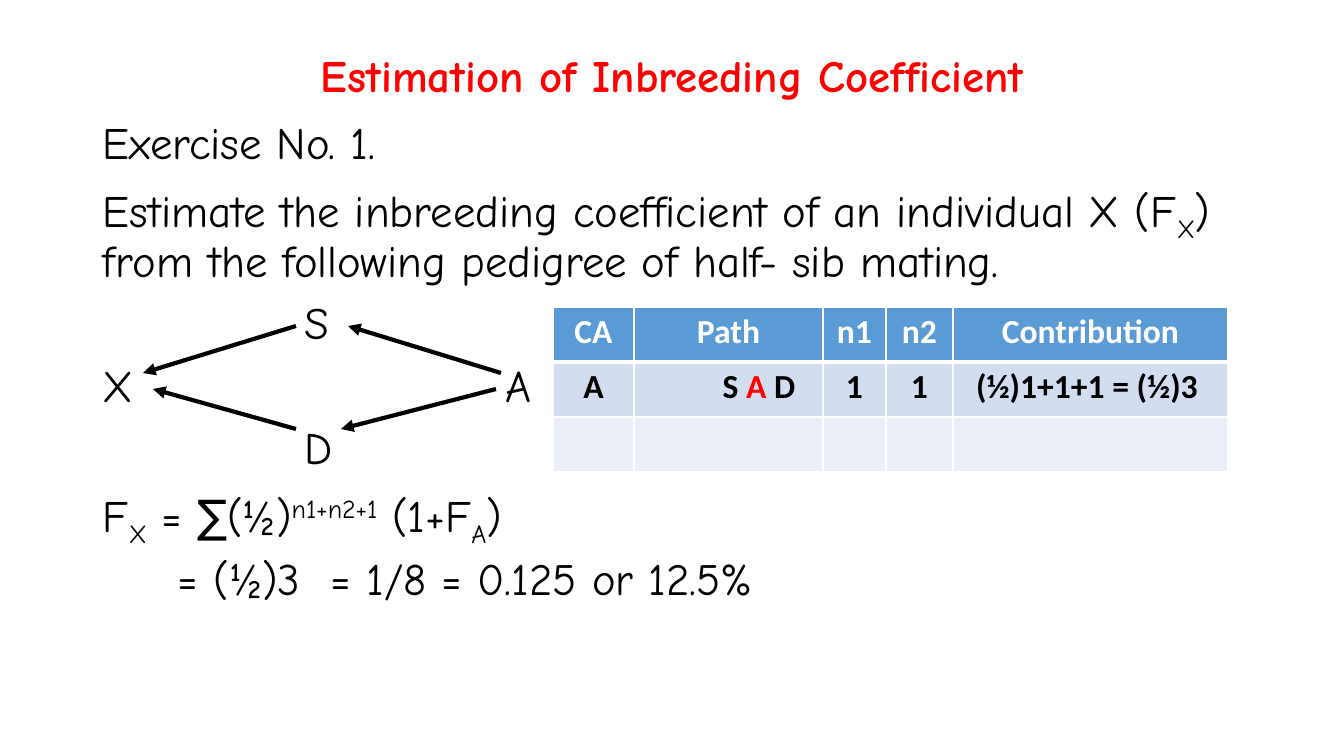
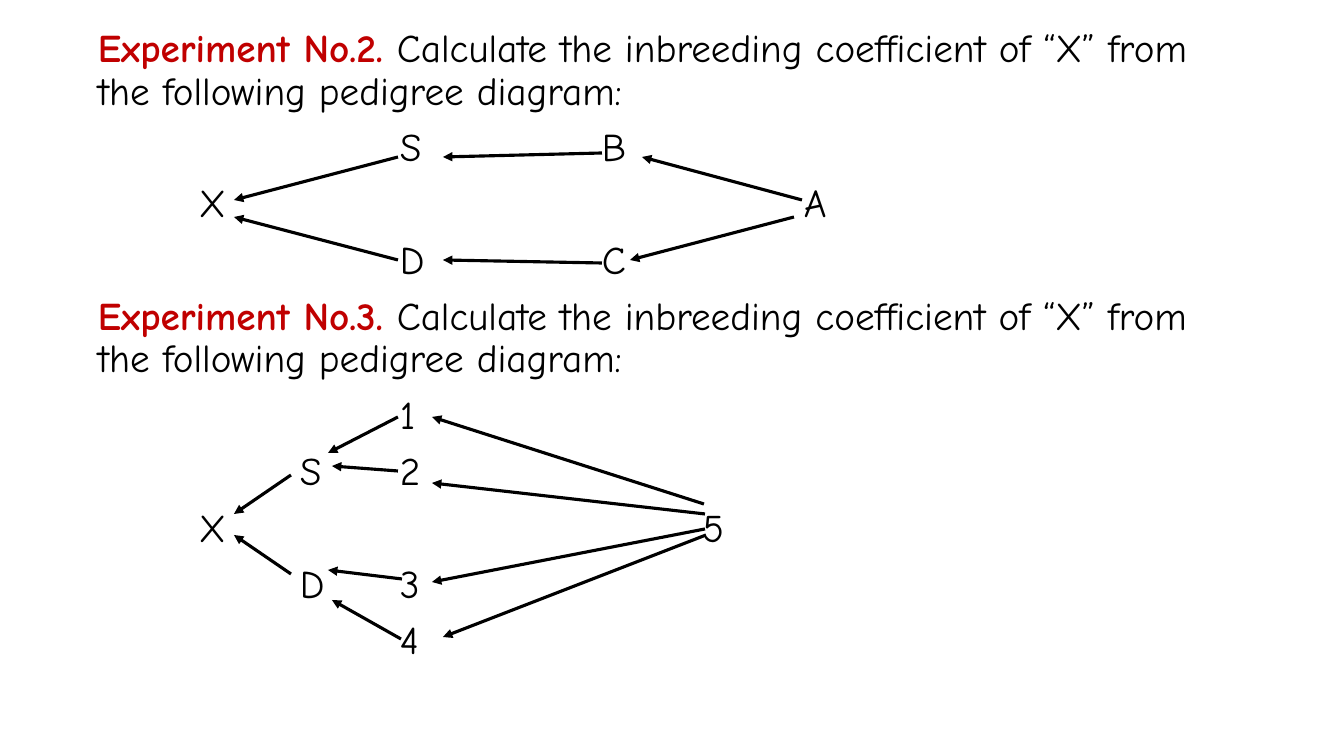
from lxml.etree import SubElement
from pptx import Presentation
from pptx.dml.color import RGBColor
from pptx.enum.shapes import MSO_CONNECTOR
from pptx.enum.text import MSO_ANCHOR as ANCHOR, MSO_AUTO_SIZE as AUTO_SIZE, PP_ALIGN as ALIGN
from pptx.oxml.ns import qn
from pptx.util import Emu, Pt

PX = 914400 / 100.8
SLIDE_SIZE = (1344, 756)
TITLE_ONLY, BLANK = 5, 6
BODY_FONT, TABLE_FONT = "Comic Neue", "Calibri"
BLACK, WHITE, RED, DARK_RED = "000000", "FFFFFF", "FF0000", "C00000"
HEADER_FILL, ROW_FILLS = "5B9BD5", ("D2DEEF", "EAEFF7")
COLUMN_TABS = [round(100.8 * step) for step in range(1, 8)]
RESULT_TABS = [75, 228]

SUB, SUPER = {"baseline": -25000}, {"baseline": 30000}
HEADING = {"bold": True, "color": DARK_RED}

TITLE = "Estimation of Inbreeding Coefficient"
TITLE_BOX = (93, 40, 1159, 76)

# A paragraph is a list of (text, format changes) runs.
EXERCISE_BOX = (93, 116, 1159, 564)
EXERCISE = [
    [("Exercise No. 1.", {})],
    [("Estimate the inbreeding coefficient of an individual X (F", {}), ("X", SUB),
     (") from the following pedigree of half- sib mating.", {})],
    [("\t\tS", {})],
    [("X\t\t\t\tA", {})],
    [("\t\tD", {})],
    [("F", {}), ("X", SUB), (" = ∑(½)", {}), ("n1+n2+1", SUPER),
     (" (1+F", {}), ("A", SUB), (")", {})],
]
RESULT = [("\t= (½)3\t= 1/8 = 0.125 or 12.5%", {})]
EXERCISE_ARROWS = [
    ((501, 373), (348, 326)), ((496, 389), (341, 429)),
    ((296, 326), (143, 373)), ((296, 429), (153, 389)),
]

TABLE_ORIGIN = (553, 307)
COLUMN_WIDTHS, ROW_HEIGHT = (81, 189, 63, 67, 275), 55
PATH_ROWS = [
    [[(name, {})] for name in ("CA", "Path", "n1", "n2", "Contribution")],
    [[("A", {})], [("S ", {}), ("A", {"color": RED}), (" D", {})],
     [("1", {})], [("1", {})], [("(½)1+1+1 = (½)3", {})]],
    [[] for _ in COLUMN_WIDTHS],
]
PATH_CELL, PATH_INDENT = (1, 1), 71
CONTRIBUTION_CELL, CONTRIBUTION_INDENT = (1, 4), 17

EXPERIMENTS_BOX = (88, 24, 1159, 650)
TASK = "Calculate the inbreeding coefficient of “X” from the following pedigree diagram:"
EXPERIMENTS = [
    ("Experiment No.2. ", ["\t\t\tS\t\tB", "\tX\t\t\t\t\t\tA", "\t\t\tD\t\tC"]),
    ("Experiment No.3. ", ["\t\t\t1", "\t\tS\t2", "\tX\t\t\t\t\t5", "\t\tD\t3", "\t\t\t4"]),
]
EXPERIMENT_ARROWS = [
    ((398, 157), (234, 200)), ((602, 263), (443, 260)),
    ((602, 153), (443, 157)), ((802, 200), (642, 157)),
    ((794, 217), (630, 260)), ((398, 260), (234, 217)),
    ((398, 417), (328, 453)), ((401, 639), (332, 600)),
    ((704, 504), (432, 417)), ((705, 514), (432, 483)),
    ((705, 529), (432, 582)), ((706, 535), (443, 637)),
    ((398, 471), (332, 466)), ((402, 579), (328, 570)),
    ((291, 475), (234, 514)), ((291, 574), (234, 535)),
]


def px(*lengths):
    return [Emu(round(length * PX)) for length in lengths]


def rgb(color):
    return RGBColor.from_string(color)


def add_runs(paragraph, runs, **base):
    for text, changes in runs:
        style = {**base, **changes}
        run = paragraph.add_run()
        run.text = text
        run.font.color.rgb = rgb(style.pop("color"))
        baseline = style.pop("baseline", None)
        for name, value in style.items():
            setattr(run.font, name, value)
        if baseline:
            run.font._element.set("baseline", str(baseline))


def add_tabs(paragraph, positions):
    tabs = SubElement(paragraph._p.get_or_add_pPr(), qn("a:tabLst"))
    for position in px(*positions):
        SubElement(tabs, qn("a:tab"), pos=str(position), algn="l")


def add_body(slide, box, paragraphs, size):
    """Add a text box from (runs, tab positions) pairs."""
    frame = slide.shapes.add_textbox(*px(*box)).text_frame
    frame.word_wrap = True
    for index, (runs, tabs) in enumerate(paragraphs):
        paragraph = frame.add_paragraph() if index else frame.paragraphs[0]
        add_tabs(paragraph, tabs)
        paragraph.line_spacing = 0.9
        paragraph.space_before = Pt(10 if index else 0)
        add_runs(paragraph, runs, name=BODY_FONT, size=Pt(size), color=BLACK, bold=False)


def add_arrows(slide, arrows, width):
    for start, end in arrows:
        arrow = slide.shapes.add_connector(MSO_CONNECTOR.STRAIGHT, *px(*start, *end))
        arrow.line.color.rgb = rgb(BLACK)
        arrow.line.width = Pt(width)
        SubElement(arrow.line._get_or_add_ln(), qn("a:tailEnd"), type="triangle")
        SubElement(arrow._element.spPr, qn("a:effectLst"))


def add_borders(cell, bottom_width):
    properties = cell._tc.get_or_add_tcPr()
    for side, width in (("L", 1), ("R", 1), ("T", 1), ("B", bottom_width)):
        line = SubElement(properties, qn(f"a:ln{side}"), w=str(Pt(width)))
        fill = SubElement(line, qn("a:solidFill"))
        SubElement(fill, qn("a:srgbClr"), val=WHITE)


def add_path_table(slide):
    size = (sum(COLUMN_WIDTHS), ROW_HEIGHT * len(PATH_ROWS))
    table = slide.shapes.add_table(
        len(PATH_ROWS), len(COLUMN_WIDTHS), *px(*TABLE_ORIGIN, *size)).table
    for column, width in zip(table.columns, px(*COLUMN_WIDTHS)):
        column.width = width
    for row_index, row in enumerate(PATH_ROWS):
        header = row_index == 0
        for column_index, runs in enumerate(row):
            cell = table.cell(row_index, column_index)
            add_borders(cell, 3 if header else 1)
            cell.fill.solid()
            cell.fill.fore_color.rgb = rgb(HEADER_FILL if header else ROW_FILLS[row_index - 1])
            paragraph = cell.text_frame.paragraphs[0]
            paragraph.alignment = ALIGN.CENTER
            add_runs(paragraph, runs, name=TABLE_FONT, size=Pt(24), bold=True,
                     color=WHITE if header else BLACK)
    table.cell(*PATH_CELL).margin_left = px(PATH_INDENT)[0]
    table.cell(*CONTRIBUTION_CELL).margin_right = px(CONTRIBUTION_INDENT)[0]


def set_title(slide):
    title = slide.shapes.title
    title.left, title.top, title.width, title.height = px(*TITLE_BOX)
    frame = title.text_frame
    frame.auto_size = AUTO_SIZE.NONE
    frame.vertical_anchor = ANCHOR.MIDDLE
    paragraph = frame.paragraphs[0]
    paragraph.alignment = ALIGN.CENTER
    paragraph.line_spacing = 0.9
    add_runs(paragraph, [(TITLE, {})], name=BODY_FONT, size=Pt(32), color=RED, bold=True)


def add_exercise_slide(presentation):
    slide = presentation.slides.add_slide(presentation.slide_layouts[TITLE_ONLY])
    set_title(slide)
    paragraphs = [(runs, COLUMN_TABS) for runs in EXERCISE] + [(RESULT, RESULT_TABS)]
    add_body(slide, EXERCISE_BOX, paragraphs, 32)
    add_arrows(slide, EXERCISE_ARROWS, 3)
    add_path_table(slide)


def add_experiments_slide(presentation):
    slide = presentation.slides.add_slide(presentation.slide_layouts[BLANK])
    paragraphs = []
    for heading, pedigree in EXPERIMENTS:
        paragraphs.append(([(heading, HEADING), (TASK, {})], COLUMN_TABS))
        paragraphs += [([(line, {})], COLUMN_TABS) for line in pedigree]
    add_body(slide, EXPERIMENTS_BOX, paragraphs, 28)
    add_arrows(slide, EXPERIMENT_ARROWS, 2.25)


def main():
    presentation = Presentation()
    presentation.slide_width, presentation.slide_height = px(*SLIDE_SIZE)
    add_exercise_slide(presentation)
    add_experiments_slide(presentation)
    presentation.save("out.pptx")


if __name__ == "__main__":
    main()
